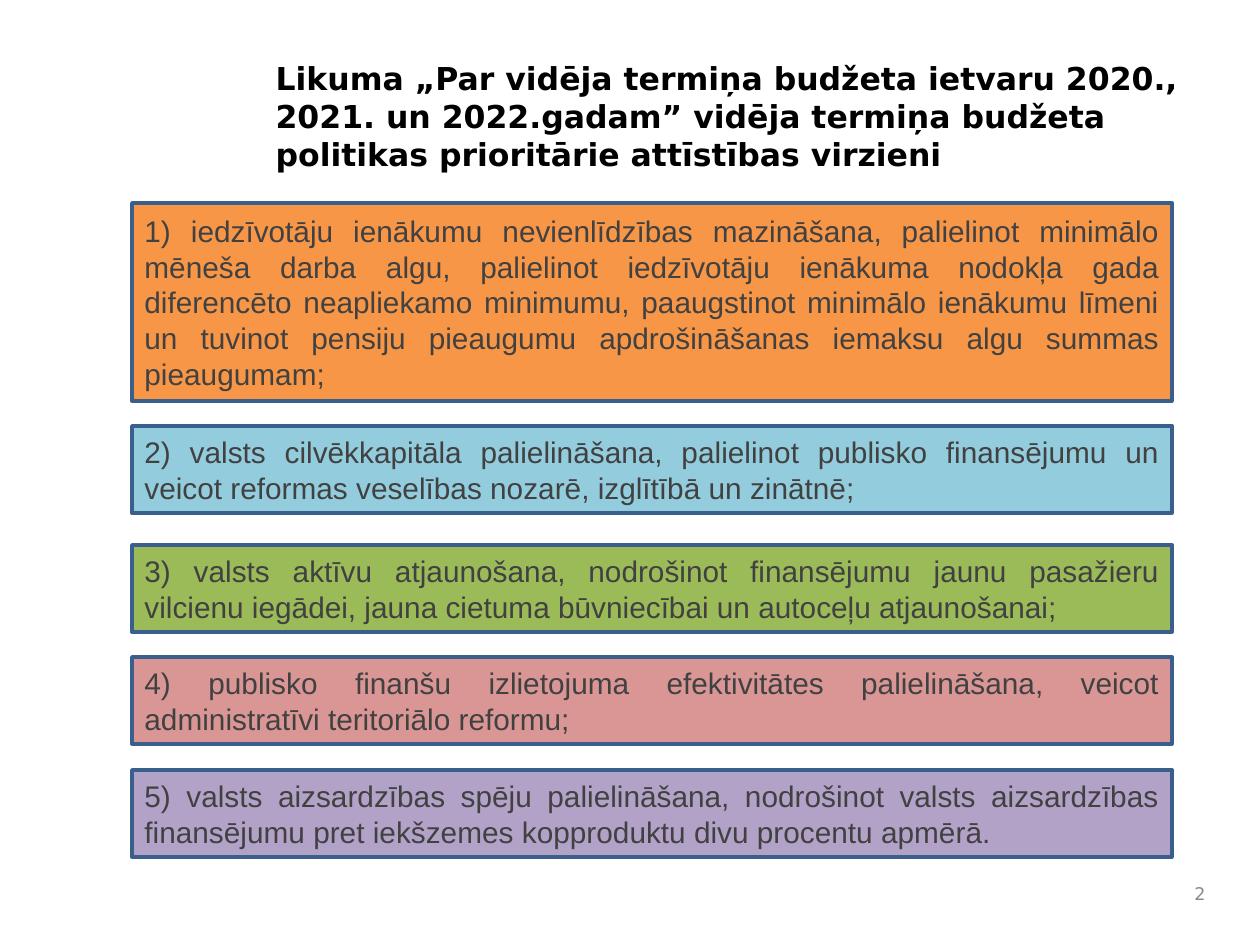
import pptx
import pptx.util
import pptx.dml.color
import pptx.enum.shapes
import pptx.enum.text
from dataclasses import dataclass

ALIGN = pptx.enum.text.PP_ALIGN
ANCHOR = pptx.enum.text.MSO_ANCHOR
PX_PER_INCH = 126


@dataclass(frozen=True)
class Theme:
    title_font: str = "DejaVu Sans"
    body_font: str = "Arial"
    title_size: int = 18
    body_size: int = 17
    number_size: int = 10
    border_width: int = 2
    title_color: str = "000000"
    body_color: str = "414142"
    number_color: str = "898989"
    border: str = "3A5F8C"
    orange: str = "F79646"
    blue: str = "93CDDD"
    green: str = "9BBB59"
    red: str = "D99694"
    purple: str = "B3A2C7"


THEME = Theme()
TITLE = (
    "Likuma „Par vidēja termiņa budžeta ietvaru 2020., 2021. un 2022.gadam” "
    "vidēja termiņa budžeta politikas prioritārie attīstības virzieni"
)
BOX_LEFT, BOX_WIDTH = 132, 1040
TALL, SHORT = 198, 87
PRIORITIES = [
    (203, TALL, THEME.orange,
     "1) iedzīvotāju ienākumu nevienlīdzības mazināšana, palielinot minimālo "
     "mēneša darba algu, palielinot iedzīvotāju ienākuma nodokļa gada "
     "diferencēto neapliekamo minimumu, paaugstinot minimālo ienākumu līmeni "
     "un tuvinot pensiju pieaugumu apdrošināšanas iemaksu algu summas pieaugumam;"),
    (426, SHORT, THEME.blue,
     "2) valsts cilvēkkapitāla palielināšana, palielinot publisko finansējumu "
     "un veicot reformas veselības nozarē, izglītībā un zinātnē;"),
    (545, SHORT, THEME.green,
     "3) valsts aktīvu atjaunošana, nodrošinot finansējumu jaunu pasažieru "
     "vilcienu iegādei, jauna cietuma būvniecībai un autoceļu atjaunošanai;"),
    (657, SHORT, THEME.red,
     "4) publisko finanšu izlietojuma efektivitātes palielināšana, veicot "
     "administratīvi teritoriālo reformu;"),
    (770, SHORT, THEME.purple,
     "5) valsts aizsardzības spēju palielināšana, nodrošinot valsts aizsardzības "
     "finansējumu pret iekšzemes kopproduktu divu procentu apmērā."),
]


def px(length):
    return pptx.util.Emu(round(length * 914400 / PX_PER_INCH))


def rgb(value):
    return pptx.dml.color.RGBColor.from_string(value)


def write_text(shape, text, font_name, size, color, alignment, anchor, bold=False):
    frame = shape.text_frame
    frame.word_wrap = True
    frame.auto_size = pptx.enum.text.MSO_AUTO_SIZE.NONE
    frame.vertical_anchor = anchor
    frame.text = text
    paragraph = frame.paragraphs[0]
    paragraph.alignment = alignment
    paragraph.font.name = font_name
    paragraph.font.size = pptx.util.Pt(size)
    paragraph.font.bold = bold
    paragraph.font.color.rgb = rgb(color)


def add_title(slide, text):
    title = slide.shapes.title
    title.left, title.top, title.width, title.height = map(px, (263, 53, 934, 142))
    write_text(title, text, THEME.title_font, THEME.title_size, THEME.title_color,
               ALIGN.LEFT, ANCHOR.TOP, bold=True)


def add_priority(slide, top, height, fill, text):
    box = slide.shapes.add_shape(
        pptx.enum.shapes.MSO_SHAPE.RECTANGLE,
        px(BOX_LEFT), px(top), px(BOX_WIDTH), px(height))
    box.shadow.inherit = False
    box.fill.solid()
    box.fill.fore_color.rgb = rgb(fill)
    box.line.color.rgb = rgb(THEME.border)
    box.line.width = pptx.util.Pt(THEME.border_width)
    write_text(box, text, THEME.body_font, THEME.body_size, THEME.body_color,
               ALIGN.JUSTIFY, ANCHOR.MIDDLE)


def add_slide_number(slide, number):
    box = slide.shapes.add_textbox(px(1160), px(872), px(58), px(42))
    write_text(box, number, THEME.title_font, THEME.number_size, THEME.number_color,
               ALIGN.RIGHT, ANCHOR.MIDDLE)


def main():
    presentation = pptx.Presentation()
    presentation.slide_width = px(1260)
    presentation.slide_height = px(945)
    slide = presentation.slides.add_slide(
        presentation.slide_layouts.get_by_name("Title Only"))
    add_title(slide, TITLE)
    add_slide_number(slide, "2")
    for priority in PRIORITIES:
        add_priority(slide, *priority)
    presentation.save("out.pptx")


if __name__ == "__main__":
    main()
